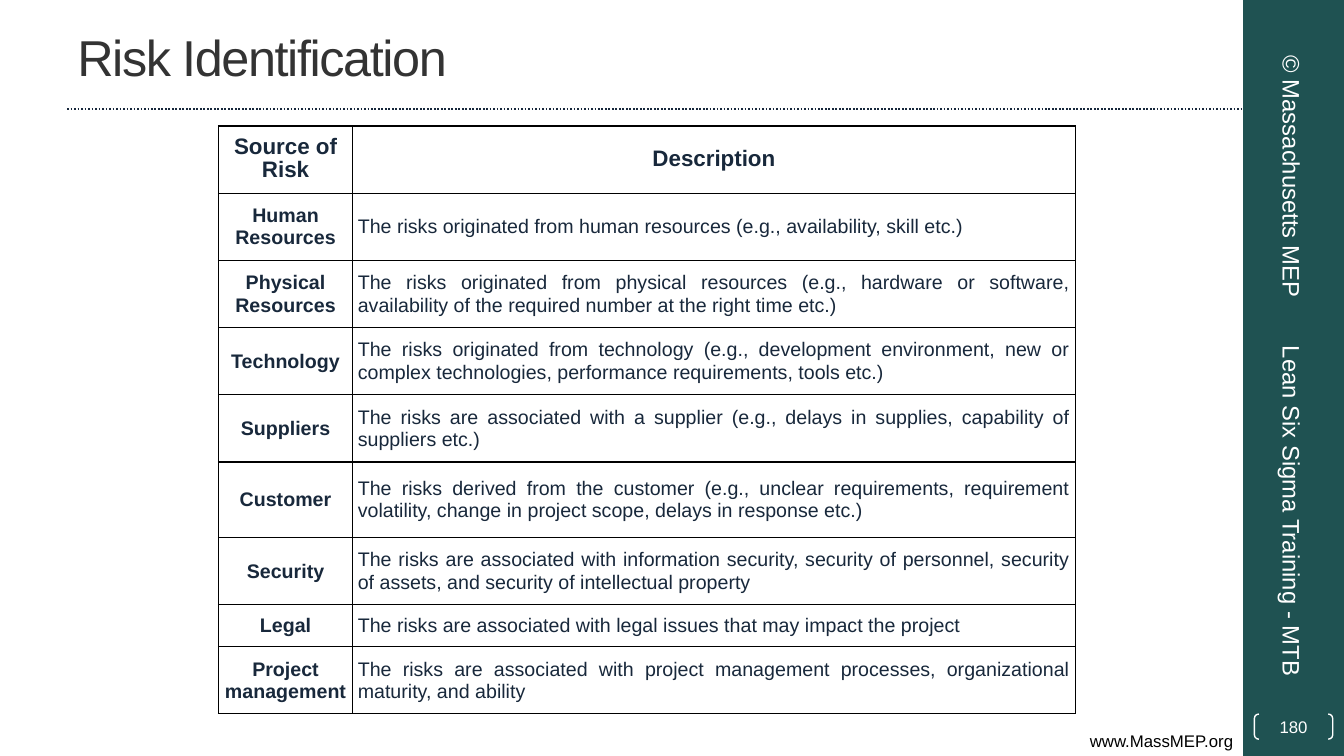
import pptx
import pptx.util
import pptx.oxml
import pptx.dml.color
import pptx.enum.dml
import pptx.enum.shapes
import pptx.enum.text

Pt = pptx.util.Pt
ALIGN = pptx.enum.text.PP_ALIGN
ANCHOR = pptx.enum.text.MSO_ANCHOR
SHAPE = pptx.enum.shapes.MSO_SHAPE
NS = "http://schemas.openxmlformats.org/drawingml/2006/main"

NAVY, TEAL, WHITE, BLACK = "18283B", "1F5252", "FFFFFF", "000000"
HEIGHTS = [48, 48, 48, 48, 48, 54, 48, 30, 48]
RISKS = [
    ("Source of Risk", "Description"),
    ("Human Resources",
     "The risks originated from human resources (e.g., availability, skill etc.)"),
    ("Physical Resources",
     "The risks originated from physical resources (e.g., hardware or software, "
     "availability of the required number at the right time etc.)"),
    ("Technology",
     "The risks originated from technology (e.g., development environment, new or "
     "complex technologies, performance requirements, tools etc.)"),
    ("Suppliers",
     "The risks are associated with a supplier (e.g., delays in supplies, "
     "capability of suppliers etc.)"),
    ("Customer",
     "The risks derived from the customer (e.g., unclear requirements, requirement "
     "volatility, change in project scope, delays in response etc.)"),
    ("Security",
     "The risks are associated with information security, security of personnel, "
     "security of assets, and security of intellectual property"),
    ("Legal",
     "The risks are associated with legal issues that may impact the project"),
    ("Project management",
     "The risks are associated with project management processes, organizational "
     "maturity, and ability"),
]


def color(code):
    return pptx.dml.color.RGBColor.from_string(code)


def write(frame, text, size=14, ink=NAVY, bold=False, align=ALIGN.LEFT,
          anchor=ANCHOR.MIDDLE, lead=None):
    frame.word_wrap = True
    frame.vertical_anchor = anchor
    para = frame.paragraphs[0]
    para.alignment = align
    if lead:
        para.line_spacing = Pt(lead)
    run = para.add_run()
    run.text = text
    font = run.font
    font.name, font.size, font.bold = "Arial", Pt(size), bold
    font.color.rgb = color(ink)
    return run


def place(shape, left, top, width, height):
    shape.left, shape.top = Pt(left), Pt(top)
    shape.width, shape.height = Pt(width), Pt(height)


def add_title(slide, text):
    title = slide.shapes.title
    place(title, 48, 2, 800, 76)
    run = write(title.text_frame, text, size=36, ink="333333")
    run.font._element.set("spc", "-100")


def add_shape(slide, kind, box, fill=None, line=None):
    shape = slide.shapes.add_shape(kind, *map(Pt, box))
    shape.shadow.inherit = False
    if fill:
        shape.fill.solid()
        shape.fill.fore_color.rgb = color(fill)
    else:
        shape.fill.background()
    if line:
        shape.line.color.rgb = color(line)
        shape.line.width = Pt(1)
    else:
        shape.line.fill.background()
    return shape


def add_label(slide, text, box, turn=0, **form):
    label = slide.shapes.add_textbox(*map(Pt, box))
    label.rotation = turn
    write(label.text_frame, text, **form)


def add_rule(slide, start, end, y):
    rule = slide.shapes.add_connector(
        pptx.enum.shapes.MSO_CONNECTOR.STRAIGHT, Pt(start), Pt(y), Pt(end), Pt(y))
    rule.line.color.rgb = color("17273B")
    rule.line.width = Pt(1.25)
    rule.line.dash_style = pptx.enum.dml.MSO_LINE.ROUND_DOT
    rule._element.spPr.append(
        pptx.oxml.parse_xml(f'<a:effectLst xmlns:a="{NS}"/>'))


def add_page(slide, text):
    page = add_shape(slide, SHAPE.DOUBLE_BRACKET, (896, 510, 56, 18), line=WHITE)
    page.adjustments[0] = 0.18
    frame = page.text_frame
    frame.margin_left = frame.margin_right = 0
    frame.margin_top = frame.margin_bottom = 0
    write(frame, text, size=12, ink=WHITE, align=ALIGN.CENTER)


def frame_cell(cell):
    """Draw a thin black border on all four sides of a cell."""
    props = cell._tc.get_or_add_tcPr()
    for side in "LRTB":
        props.append(pptx.oxml.parse_xml(
            f'<a:ln{side} xmlns:a="{NS}" w="{Pt(1)}"><a:solidFill>'
            f'<a:srgbClr val="{BLACK}"/></a:solidFill></a:ln{side}>'))


def add_grid(slide, rows, left, top, widths, heights):
    grid = slide.shapes.add_table(
        len(rows), len(widths), Pt(left), Pt(top),
        Pt(sum(widths)), Pt(sum(heights))).table
    grid.first_row = grid.horz_banding = False
    for col, width in zip(grid.columns, widths):
        col.width = Pt(width)
    for i, (row, height) in enumerate(zip(rows, heights)):
        grid.rows[i].height = Pt(height)
        for j, text in enumerate(row):
            cell = grid.cell(i, j)
            frame_cell(cell)
            cell.fill.background()
            cell.margin_left = cell.margin_right = Pt(3.6)
            cell.margin_top = cell.margin_bottom = 0
            cell.vertical_anchor = ANCHOR.MIDDLE
            head = i == 0 or j == 0
            write(cell.text_frame, text, size=14 if i else 16, bold=head,
                  align=ALIGN.CENTER if head else ALIGN.JUSTIFY,
                  anchor=None, lead=16)


def main():
    deck = pptx.Presentation()
    deck.slide_width, deck.slide_height = Pt(960), Pt(540)
    slide = deck.slides.add_slide(deck.slide_layouts[5])
    add_shape(slide, SHAPE.RECTANGLE, (888, 0, 72, 540), fill=TEAL)
    add_rule(slide, 48, 888, 78)
    add_label(slide, "www.MassMEP.org", (0, 518.4, 888, 21.6), size=12, ink=BLACK,
              align=ALIGN.RIGHT, anchor=ANCHOR.TOP)
    add_title(slide, "Risk Identification")
    add_page(slide, "180")
    add_label(slide, "© Massachusetts MEP", (809, 107, 228, 38), turn=90,
              size=17, ink=WHITE, align=ALIGN.CENTER)
    add_label(slide, "Lean Six Sigma Training - MTB", (791, 353, 264, 38), turn=90,
              size=17, ink=WHITE)
    add_grid(slide, RISKS, 156, 90, (96, 516), HEIGHTS)
    deck.save("out.pptx")


if __name__ == "__main__":
    main()
